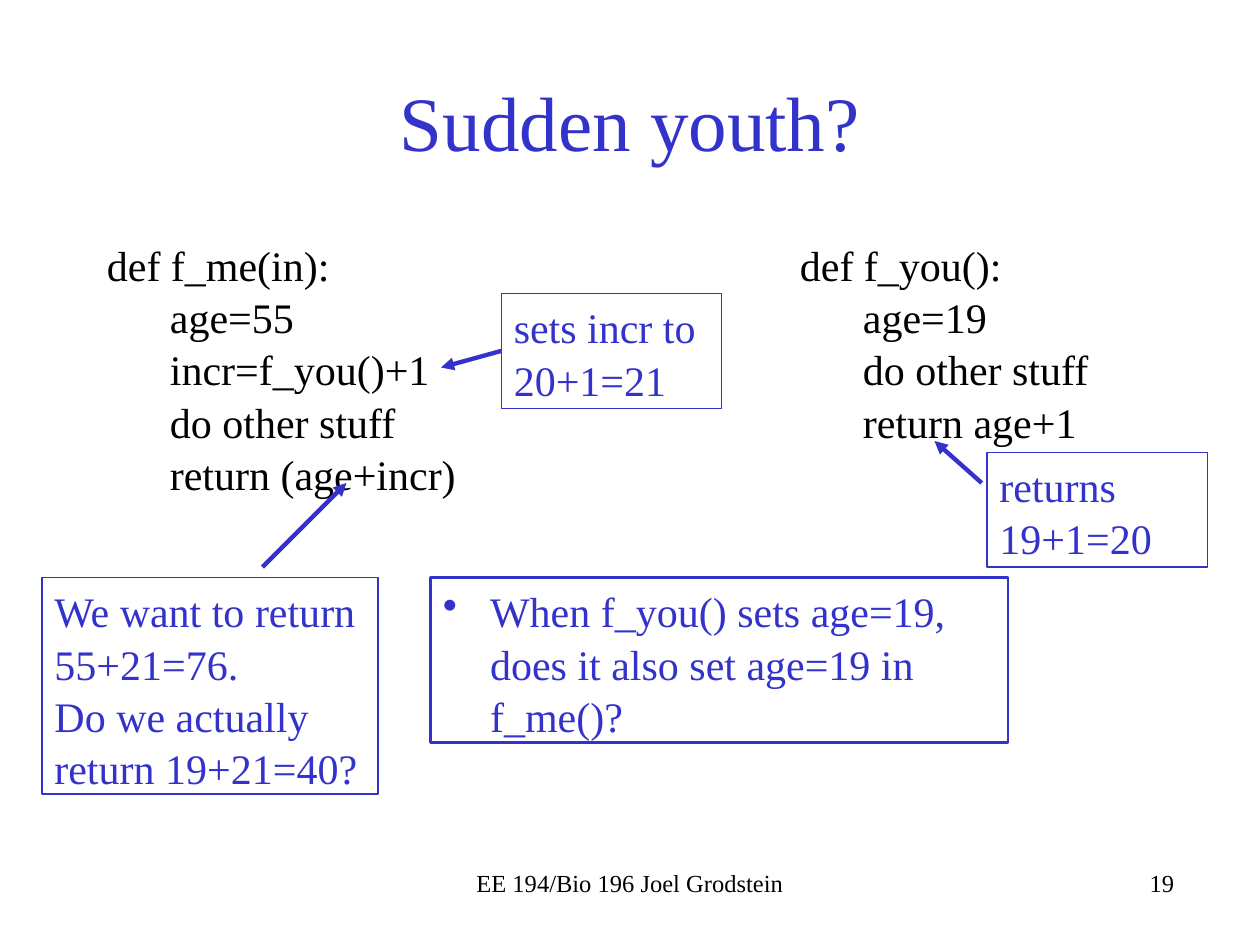
"""Build the "Sudden youth?" slide with two code listings and annotated callouts."""
from dataclasses import dataclass

from lxml import etree
from pptx import Presentation
from pptx import util as u
from pptx.dml.color import RGBColor
from pptx.enum import shapes, text
from pptx.oxml.ns import qn

COLORS = {"ink": "000000", "accent": "3333CC", "paper": "FFFFFF"}
FONT = "Times New Roman"
INDENT = 36
HANGING = 27


@dataclass
class Listing:
    left: float
    height: float
    lines: list[str]


@dataclass
class Callout:
    left: float
    top: float
    width: float
    height: float
    lines: list[str]
    border: float = 0.75
    bullet: bool = False


@dataclass
class Arrow:
    start: tuple[float, float]
    end: tuple[float, float]
    source: int | None = None


LISTINGS = [
    Listing(54, 228, ["def f_me(in):", "age=55", "incr=f_you()+1",
                      "do other stuff", "return (age+incr)"]),
    Listing(450, 124, ["def f_you():", "age=19", "do other stuff", "return age+1"]),
]
CALLOUTS = [
    Callout(564, 258.5, 126, 65.5, ["returns 19+1=20"]),
    Callout(286.5, 167.75, 126, 65.5, ["sets incr to 20+1=21"]),
    Callout(24, 330, 192, 123.75,
            ["We want to return 55+21=76.", "Do we actually return 19+21=40?"]),
    Callout(246, 330, 330, 94.5,
            ["When f_you() sets age=19, does it also set age=19 in f_me()?"], 1.5, True),
]
ARROWS = [
    Arrow((561, 276), (534, 252)),
    Arrow((286.5, 200.5), (252, 210), 1),
    Arrow((150, 324), (198, 276)),
]


def rgb(name: str) -> RGBColor:
    """Return a named palette colour."""
    return RGBColor.from_string(COLORS[name])


def write(frame, lines: list[str], *, size: float = 24, color: str = "ink",
          align=text.PP_ALIGN.LEFT, anchor=text.MSO_ANCHOR.TOP,
          indent: float = 0, bullet: bool = False, spacing: float = 1.04) -> None:
    """Fill a text frame, indenting every line after the first by indent points."""
    frame.word_wrap = True
    frame.auto_size = text.MSO_AUTO_SIZE.NONE
    frame.vertical_anchor = anchor
    for index, line in enumerate(lines):
        para = frame.add_paragraph() if index else frame.paragraphs[0]
        para.alignment = align
        para.line_spacing = spacing
        para.space_before = u.Pt(0)
        span = para.add_run()
        span.text = line
        span.font.name = FONT
        span.font.size = u.Pt(size)
        span.font.color.rgb = rgb(color)
        properties = para._p.get_or_add_pPr()
        if index and indent:
            properties.set("marL", str(u.Pt(indent)))
        if bullet:
            properties.set("marL", str(u.Pt(HANGING)))
            properties.set("indent", str(u.Pt(-HANGING)))
            etree.SubElement(properties, qn("a:buChar"), char="•")


def add_text(page, left: float, top: float, width: float, height: float,
             lines: list[str], **style) -> None:
    """Add a plain text box."""
    box = page.shapes.add_textbox(*map(u.Pt, (left, top, width, height)))
    write(box.text_frame, lines, **style)


def add_callout(page, callout: Callout):
    """Add an outlined rectangle with accent text."""
    frame = (callout.left, callout.top, callout.width, callout.height)
    box = page.shapes.add_shape(shapes.MSO_SHAPE.RECTANGLE, *map(u.Pt, frame))
    box.shadow.inherit = False
    box.fill.background()
    box.line.color.rgb = rgb("accent")
    box.line.width = u.Pt(callout.border)
    write(box.text_frame, callout.lines, color="accent", bullet=callout.bullet)
    return box


def add_arrow(page, arrow: Arrow, boxes: list) -> None:
    """Add an arrow, joined to the left side of its source callout if it has one."""
    line = page.shapes.add_connector(
        shapes.MSO_CONNECTOR.STRAIGHT, *map(u.Pt, arrow.start + arrow.end))
    if arrow.source is not None:
        line.begin_connect(boxes[arrow.source], 1)
    line.line.color.rgb = rgb("accent")
    line.line.width = u.Pt(2.5)
    etree.SubElement(line.line._get_or_add_ln(), qn("a:tailEnd"), type="triangle")
    etree.SubElement(line._element.spPr, qn("a:effectLst"))


def main() -> None:
    """Build and save the deck."""
    deck = Presentation()
    deck.slide_width, deck.slide_height = u.Pt(720), u.Pt(540)
    page = deck.slides.add_slide(deck.slide_layouts[5])
    page.background.fill.solid()
    page.background.fill.fore_color.rgb = rgb("paper")

    title = page.shapes.title
    title.left, title.top, title.width, title.height = map(u.Pt, (54, 24, 612, 90))
    write(title.text_frame, ["Sudden youth?"], size=44, color="accent", spacing=1,
          align=text.PP_ALIGN.CENTER, anchor=text.MSO_ANCHOR.MIDDLE)

    for listing in LISTINGS:
        add_text(page, listing.left, 132, 240, listing.height, listing.lines, indent=INDENT)
    boxes = [add_callout(page, callout) for callout in CALLOUTS]
    for arrow in ARROWS:
        add_arrow(page, arrow, boxes)

    add_text(page, 246, 492, 228, 36, ["EE 194/Bio 196 Joel Grodstein"],
             size=14, align=text.PP_ALIGN.CENTER)
    add_text(page, 450, 492, 228, 36, ["19"], size=14, align=text.PP_ALIGN.RIGHT)
    deck.save("out.pptx")


if __name__ == "__main__":
    main()
